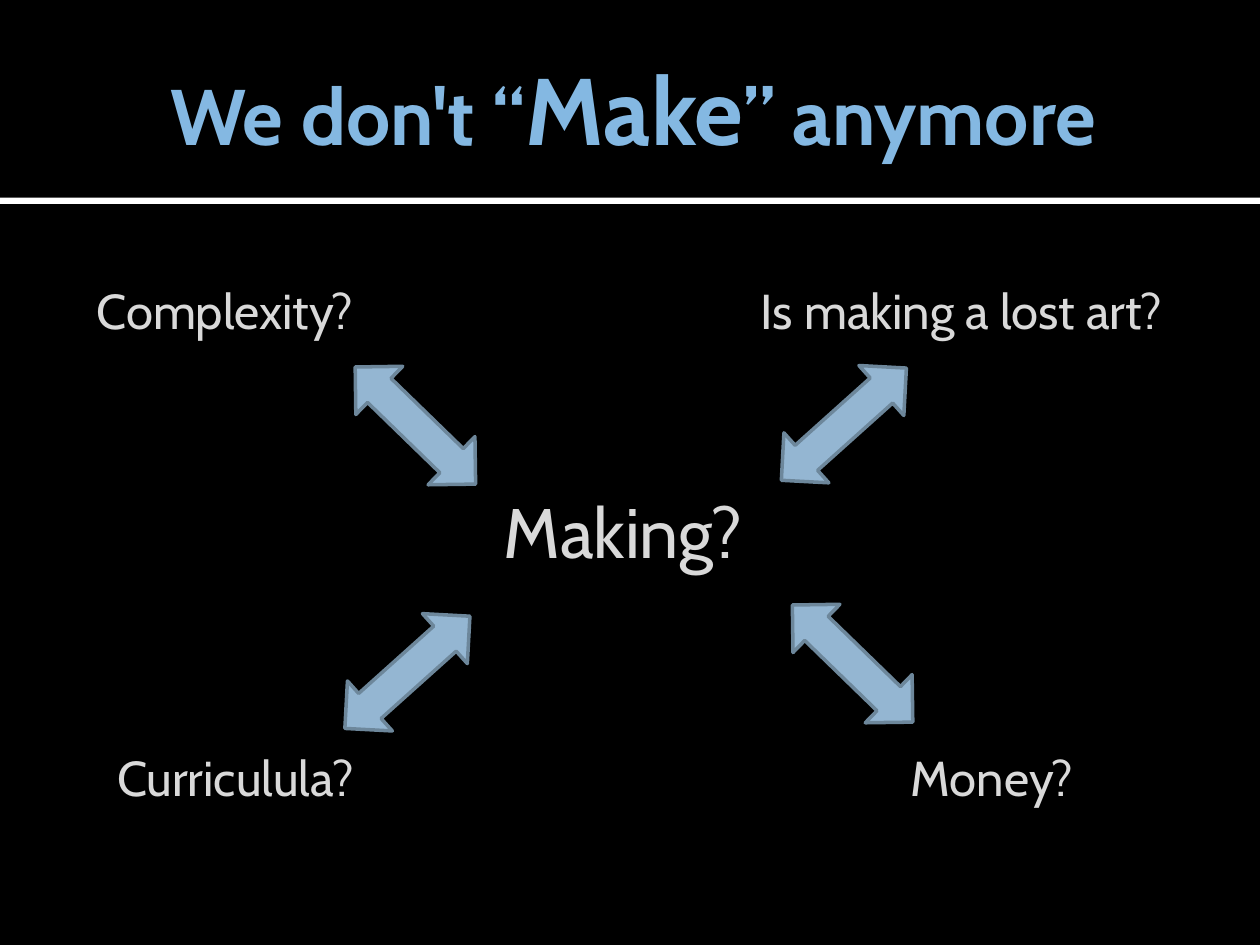
import pptx
import pptx.dml.color
import pptx.enum.shapes
import pptx.enum.text
import pptx.util

Pt = pptx.util.Pt
SHAPES = pptx.enum.shapes.MSO_SHAPE
TEXT = pptx.enum.text
FONT = "Cabin"
GREY = "D9D9D9"
BLUE = "84B8E2"


def paint(target, color):
    """Give a fill or a line fill one solid colour."""
    target.solid()
    target.fore_color.rgb = pptx.dml.color.RGBColor.from_string(color)


def style(font, size, color):
    """Set the typeface, size and colour of a font."""
    font.name = FONT
    font.size = Pt(size)
    paint(font.fill, color)


def add_box(slide, left, top, width, height):
    """Add an empty text box and return it."""
    return slide.shapes.add_textbox(Pt(left), Pt(top), Pt(width), Pt(height))


def add_title(slide, parts):
    """Add the centred bold title from pairs of text and size."""
    frame = add_box(slide, 36, 12.24, 648, 98.64).text_frame
    frame.word_wrap = True
    frame.vertical_anchor = TEXT.MSO_ANCHOR.MIDDLE
    frame.margin_right = Pt(3.6)
    line = frame.paragraphs[0]
    line.alignment = TEXT.PP_ALIGN.CENTER
    style(line.font, 45, BLUE)
    line.font.bold = True
    for text, size in parts:
        run = line.add_run()
        run.text = text
        run.font.size = Pt(size)


def add_label(slide, text, left, top, width, height=41.2, size=28):
    """Add a one-line label that grows with its text."""
    frame = add_box(slide, left, top, width, height).text_frame
    frame.word_wrap = False
    frame.auto_size = TEXT.MSO_AUTO_SIZE.SHAPE_TO_FIT_TEXT
    line = frame.paragraphs[0]
    line.text = text
    style(line.font, size, GREY)


def add_shape(slide, kind, left, top, width, height, color):
    """Add a filled preset shape without shadow or outline."""
    shape = slide.shapes.add_shape(kind, Pt(left), Pt(top), Pt(width), Pt(height))
    shape.shadow.inherit = False
    paint(shape.fill, color)
    shape.line.fill.background()
    return shape


def add_arrow(slide, left, top, angle):
    """Add a turned double arrow."""
    arrow = add_shape(slide, SHAPES.LEFT_RIGHT_ARROW, left, top, 96, 38.4, "94B6D2")
    arrow.rotation = angle
    paint(arrow.line.fill, "6D879B")
    arrow.line.width = Pt(2)


def main():
    """Build the slide and save it."""
    deck = pptx.Presentation()
    deck.slide_width, deck.slide_height = Pt(720), Pt(540)
    slide = deck.slides.add_slide(deck.slide_layouts[6])
    paint(slide.background.fill, "000000")

    add_shape(slide, SHAPES.RECTANGLE, 0, 113, 720, 3.6, "FFFFFF")
    add_title(slide, [("We don't “", 45), ("Make", 54), ("” anymore", 45)])

    add_label(slide, "Making?", 280.8, 275.8, 167, 55.4, 40)
    upper, lower = 157, 423.4
    add_label(slide, "Complexity?", 48.2, upper, 170.6)
    add_label(slide, "Is making a lost art?", 427.7, upper, 267.8)
    add_label(slide, "Curriculula?", 59.8, lower, 165.6)
    add_label(slide, "Money?", 513.4, lower, 115.2)

    falling, rising = 44.2, 138.1
    add_arrow(slide, 189.4, 224, falling)
    add_arrow(slide, 439.2, 360, falling)
    add_arrow(slide, 434.2, 223.2, rising)
    add_arrow(slide, 184.8, 365, rising)

    deck.save("out.pptx")


if __name__ == "__main__":
    main()
